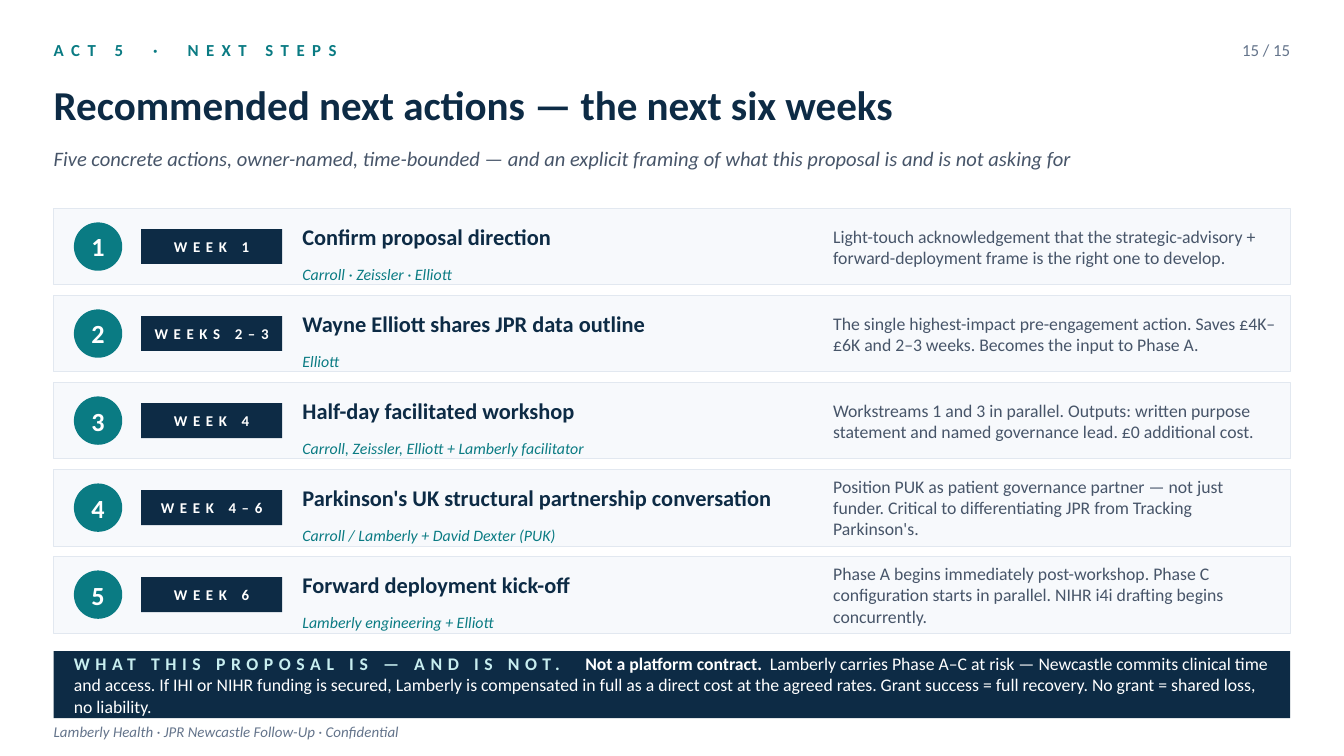
from dataclasses import dataclass

from pptx import Presentation
from pptx.dml.color import RGBColor
from pptx.enum.shapes import MSO_SHAPE
from pptx.enum.text import MSO_ANCHOR, PP_ALIGN
from pptx.util import Inches, Pt

RECTANGLE, OVAL = MSO_SHAPE.RECTANGLE, MSO_SHAPE.OVAL
MIDDLE = MSO_ANCHOR.MIDDLE
LEFT, CENTER, RIGHT = PP_ALIGN.LEFT, PP_ALIGN.CENTER, PP_ALIGN.RIGHT

SLIDE_WIDTH = 10
SLIDE_HEIGHT = SLIDE_WIDTH * 9 / 16


@dataclass(frozen=True)
class Theme:
    """Colours, font and type sizes of the slide."""
    font: str = "Calibri"
    navy: str = "0D2B45"
    teal: str = "0A7B83"
    aqua: str = "C8EEF0"
    slate: str = "475569"
    muted: str = "64748B"
    card: str = "F7F9FC"
    border: str = "E2E8F0"
    white: str = "FFFFFF"
    title: float = 22
    number: float = 14
    action: float = 12
    subtitle: float = 11
    body: float = 9.5
    label: float = 9
    owner: float = 8.5
    small: float = 8


THEME = Theme()

ACTIONS = [
    ("WEEK 1", "Confirm proposal direction", "Carroll · Zeissler · Elliott",
     "Light-touch acknowledgement that the strategic-advisory + "
     "forward-deployment frame is the right one to develop."),
    ("WEEKS 2–3", "Wayne Elliott shares JPR data outline", "Elliott",
     "The single highest-impact pre-engagement action. Saves £4K–£6K and "
     "2–3 weeks. Becomes the input to Phase A."),
    ("WEEK 4", "Half-day facilitated workshop",
     "Carroll, Zeissler, Elliott + Lamberly facilitator",
     "Workstreams 1 and 3 in parallel. Outputs: written purpose statement "
     "and named governance lead. £0 additional cost."),
    ("WEEK 4–6", "Parkinson's UK structural partnership conversation",
     "Carroll / Lamberly + David Dexter (PUK)",
     "Position PUK as patient governance partner — not just funder. "
     "Critical to differentiating JPR from Tracking Parkinson's."),
    ("WEEK 6", "Forward deployment kick-off", "Lamberly engineering + Elliott",
     "Phase A begins immediately post-workshop. Phase C configuration "
     "starts in parallel. NIHR i4i drafting begins concurrently."),
]


def write(frame, content, align=LEFT, **style):
    """Fill a text frame with a string or with (text, style changes) runs."""
    frame.margin_left = frame.margin_right = 0
    frame.margin_top = frame.margin_bottom = 0
    frame.word_wrap = True
    frame.vertical_anchor = MIDDLE
    paragraph = frame.paragraphs[0]
    paragraph.alignment = align
    runs = [(content, {})] if isinstance(content, str) else content
    for text, changes in runs:
        look = {**style, **changes}
        run = paragraph.add_run()
        run.text = text
        run.font.name = THEME.font
        run.font.size = Pt(look["size"])
        run.font.color.rgb = RGBColor.from_string(look["color"])
        run.font.bold = look.get("bold", False)
        run.font.italic = look.get("italic", False)
        if look.get("spacing"):
            run.font._element.set("spc", str(round(look["spacing"] * 100)))


def add_text(slide, box, content, **style):
    """Add a text box at (left, top, width, height) in inches."""
    textbox = slide.shapes.add_textbox(*map(Inches, box))
    write(textbox.text_frame, content, **style)


def add_panel(slide, preset, box, fill, line=None):
    """Add a filled shape, with a thin border if a line colour is given."""
    panel = slide.shapes.add_shape(preset, *map(Inches, box))
    panel.shadow.inherit = False
    panel.fill.solid()
    panel.fill.fore_color.rgb = RGBColor.from_string(fill)
    if line:
        panel.line.color.rgb = RGBColor.from_string(line)
        panel.line.width = Pt(0.4)
    else:
        panel.line.fill.background()
    return panel


def add_header(slide, box):
    """Place section label, page number, title and subtitle."""
    left, top, width, _ = box
    page_width = 0.5
    wide = {"spacing": 10}
    section = [("ACT 5", {}), (" ", wide), ("·", {}), (" ", wide), ("NEXT STEPS", {})]
    add_text(slide, (left, top, 6, 0.3), section,
             size=THEME.label, color=THEME.teal, bold=True, spacing=4)
    add_text(slide, (left + width - page_width, top, page_width, 0.3), "15 / 15",
             align=RIGHT, size=THEME.label, color=THEME.muted)
    add_text(slide, (left, top + 0.28, width, 0.55),
             "Recommended next actions — the next six weeks",
             size=THEME.title, color=THEME.navy, bold=True)
    add_text(slide, (left, top + 0.8, width, 0.32),
             "Five concrete actions, owner-named, time-bounded — and an explicit "
             "framing of what this proposal is and is not asking for",
             size=THEME.subtitle, color=THEME.slate, italic=True)


def add_action(slide, box, number, week, action, owner, detail):
    """Place one action card with number, week, owner and detail."""
    left, top, _, height = box
    badge_size, tag_height = 0.36, 0.26
    badge_top = top + (height - badge_size) / 2
    tag_top = top + (height - tag_height) / 2
    add_panel(slide, RECTANGLE, box, THEME.card, THEME.border)
    badge = add_panel(slide, OVAL, (left + 0.15, badge_top, badge_size, badge_size),
                      THEME.teal)
    write(badge.text_frame, str(number), align=CENTER,
          size=THEME.number, color=THEME.white, bold=True)
    tag = add_panel(slide, RECTANGLE, (left + 0.65, tag_top, 1.05, tag_height),
                    THEME.navy)
    write(tag.text_frame, week, align=CENTER,
          size=THEME.small, color=THEME.white, bold=True, spacing=3)
    add_text(slide, (left + 1.85, top + 0.05, 3.85, 0.32), action,
             size=THEME.action, color=THEME.navy, bold=True)
    add_text(slide, (left + 1.85, top + 0.38, 3.85, 0.22), owner,
             size=THEME.owner, color=THEME.teal, italic=True)
    add_text(slide, (left + 5.8, top + 0.05, 3.3, height - 0.1), detail,
             size=THEME.body, color=THEME.slate)


def add_actions(slide, box):
    """Spread the action cards evenly over the box."""
    left, top, width, height = box
    card_height = 0.57
    pitch = (height - card_height) / (len(ACTIONS) - 1)
    for index, action in enumerate(ACTIONS):
        card = (left, top + index * pitch, width, card_height)
        add_action(slide, card, index + 1, *action)


def add_framing(slide, box):
    """Place the band saying what the proposal is and is not."""
    left, top, width, height = box
    add_panel(slide, RECTANGLE, box, THEME.navy)
    framing = [
        ("WHAT THIS PROPOSAL IS — AND IS NOT.",
         {"color": THEME.aqua, "bold": True, "spacing": 3}),
        (" ", {"spacing": 8}),
        ("Not a platform contract.", {"bold": True}),
        (" ", {"spacing": 2}),
        ("Lamberly carries Phase A–C at risk — Newcastle commits clinical time and "
         "access. If IHI or NIHR funding is secured, Lamberly is compensated in full "
         "as a direct cost at the agreed rates. Grant success = full recovery. "
         "No grant = shared loss, no liability.", {}),
    ]
    add_text(slide, (left + 0.15, top + 0.04, width - 0.3, height - 0.08), framing,
             size=THEME.body, color=THEME.white)


def add_footer(slide, box):
    """Place the confidentiality line."""
    add_text(slide, box, "Lamberly Health · JPR Newcastle Follow-Up · Confidential",
             size=THEME.small, color=THEME.muted, italic=True)


def main():
    """Build the next-steps slide and save it."""
    deck = Presentation()
    deck.slide_width, deck.slide_height = Inches(SLIDE_WIDTH), Inches(SLIDE_HEIGHT)
    slide = deck.slides.add_slide(deck.slide_layouts[6])
    left = 0.4
    width = SLIDE_WIDTH - 2 * left
    add_header(slide, (left, 0.22, width, 1.12))
    add_actions(slide, (left, 1.55, width, 3.16))
    add_framing(slide, (left, SLIDE_HEIGHT - 0.78, width, 0.5))
    add_footer(slide, (left, 5.33, width, 0.22))
    deck.save("out.pptx")


if __name__ == "__main__":
    main()
